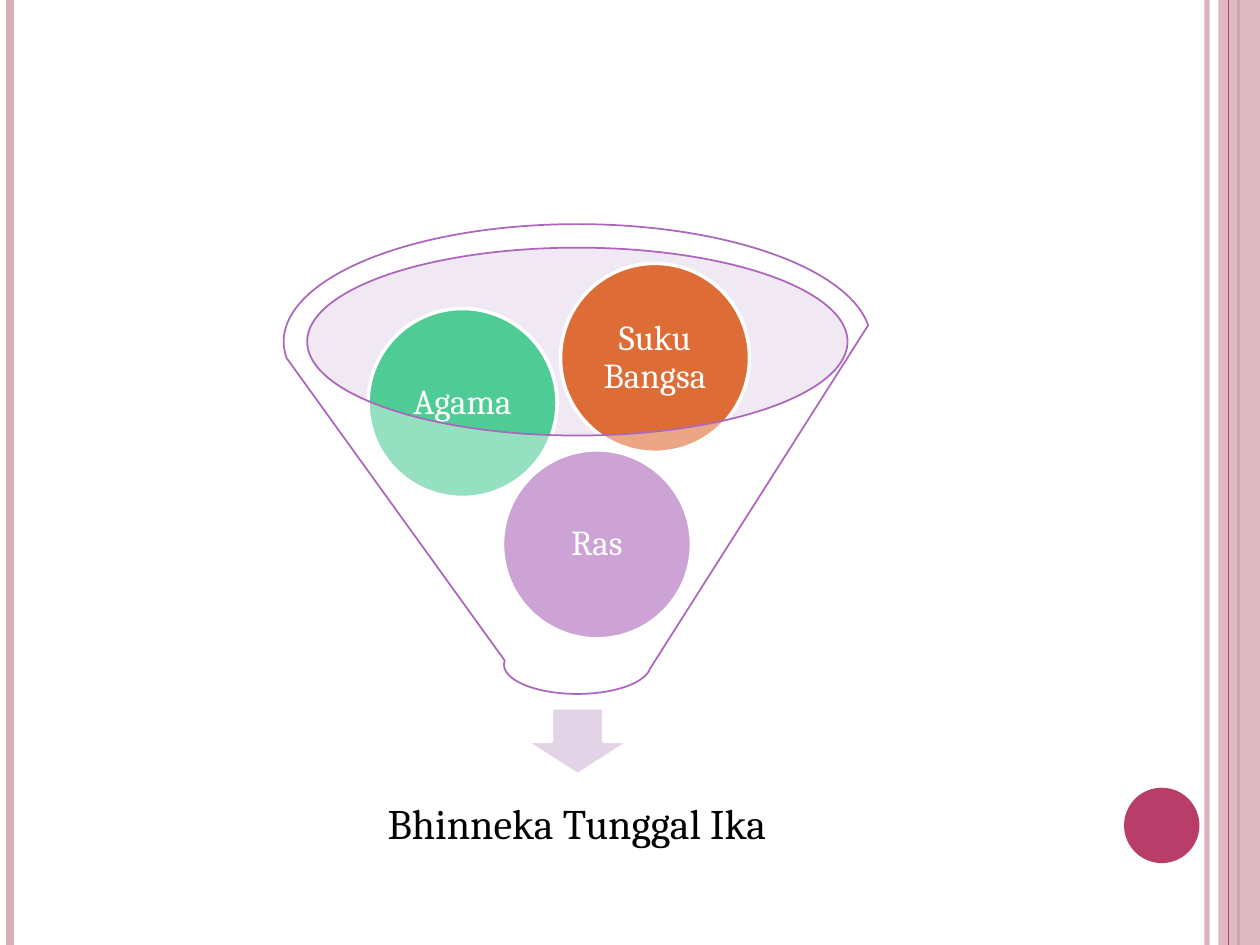
from lxml.etree import SubElement
from pptx import Presentation
from pptx.dml.color import RGBColor
from pptx.enum.shapes import MSO_CONNECTOR, MSO_SHAPE
from pptx.enum.text import MSO_ANCHOR as ANCHOR, PP_ALIGN as ALIGN
from pptx.oxml.ns import qn
from pptx.util import Cm, Pt

WHITE = RGBColor(0xFF, 0xFF, 0xFF)
BLACK = RGBColor(0x00, 0x00, 0x00)
ROSE = RGBColor(0xD8, 0xAF, 0xB9)
CRIMSON = RGBColor(0xB8, 0x3D, 0x68)
PURPLE = RGBColor(0xAC, 0x66, 0xBB)
GREEN = RGBColor(0x4F, 0xCC, 0x96)
ORANGE = RGBColor(0xDE, 0x6C, 0x36)
LILAC = RGBColor(0xDB, 0xC6, 0xE0)
PALE_LILAC = RGBColor(0xE3, 0xD3, 0xE7)
WIDTH, HEIGHT = 25.4, 19.05
BALL = 3.81


class FunnelSlide:
    """Draws the elements of a funnel diagram on one slide."""

    font = "Cambria"

    def __init__(self, prs):
        self.s = prs.slides.add_slide(prs.slide_layouts[6])

    def set_alpha(self, sp, percent):
        clr = sp._element.spPr.find(".//" + qn("a:srgbClr"))
        SubElement(clr, qn("a:alpha"), val=str(percent * 1000))

    def rule(self, x, color, width, alpha=100):
        line = self.s.shapes.add_connector(
            MSO_CONNECTOR.STRAIGHT, Cm(x), Cm(0), Cm(x), Cm(HEIGHT))
        line.line.color.rgb = color
        line.line.width = Pt(width)
        if alpha < 100:
            self.set_alpha(line, alpha)
        SubElement(line._element.spPr, qn("a:effectLst"))

    def shape(self, kind, x, y, w, h, fill, alpha=100, line=None, width=2):
        sp = self.s.shapes.add_shape(kind, Cm(x), Cm(y), Cm(w), Cm(h))
        sp.shadow.inherit = False
        sp.fill.solid()
        sp.fill.fore_color.rgb = fill
        if alpha < 100:
            self.set_alpha(sp, alpha)
        if line is None:
            sp.line.fill.background()
        else:
            sp.line.color.rgb = line
            sp.line.width = Pt(width)
        return sp

    def label(self, sp, text, size, color, inset):
        tf = sp.text_frame
        tf.word_wrap = True
        tf.vertical_anchor = ANCHOR.MIDDLE
        tf.margin_left = tf.margin_right = Cm(inset)
        tf.margin_top = tf.margin_bottom = Cm(inset)
        tf.text = text
        p = tf.paragraphs[0]
        p.alignment = ALIGN.CENTER
        p.line_spacing = 0.9
        f = p.runs[0].font
        f.name, f.size, f.color.rgb = self.font, Pt(size), color

    def ball(self, text, x, y, color):
        sp = self.shape(MSO_SHAPE.OVAL, x, y, BALL, BALL, color, line=WHITE)
        self.label(sp, text, 20, WHITE, 0.08)

    def caption(self, text, x, y, w, h):
        sp = self.s.shapes.add_textbox(Cm(x), Cm(y), Cm(w), Cm(h))
        self.label(sp, text, 24, BLACK, 0.48)


def main():
    prs = Presentation()
    prs.slide_width, prs.slide_height = Cm(WIDTH), Cm(HEIGHT)
    s = FunnelSlide(prs)

    s.rule(24.33, ROSE, 3, alpha=93)
    s.rule(0.2, ROSE, 4.5)
    s.rule(24.97, CRIMSON, 1.5)
    s.shape(MSO_SHAPE.RECTANGLE, 24.56, 0, 0.84, HEIGHT, ROSE, alpha=87)
    s.rule(24.77, CRIMSON, 0.75)
    s.shape(MSO_SHAPE.OVAL, 22.66, 15.88, 1.52, 1.52, CRIMSON)

    s.shape(MSO_SHAPE.OVAL, 6.17, 5, 10.92, 3.78, LILAC, alpha=40)
    s.shape(MSO_SHAPE.DOWN_ARROW, 10.59, 14.27, 2.11, 1.35, PALE_LILAC, line=WHITE)
    s.caption("Bhinneka Tunggal Ika", 6.55, 15.37, 10.16, 2.54)
    for text, x, y, color in (
        ("Ras", 10.13, 9.07, PURPLE),
        ("Agama", 7.42, 6.22, GREEN),
        ("Suku Bangsa", 11.3, 5.31, ORANGE),
    ):
        s.ball(text, x, y, color)
    s.shape(MSO_SHAPE.FUNNEL, 5.72, 4.52, 11.84, 9.47, WHITE,
            alpha=40, line=PURPLE, width=1)

    prs.save("out.pptx")


if __name__ == "__main__":
    main()
